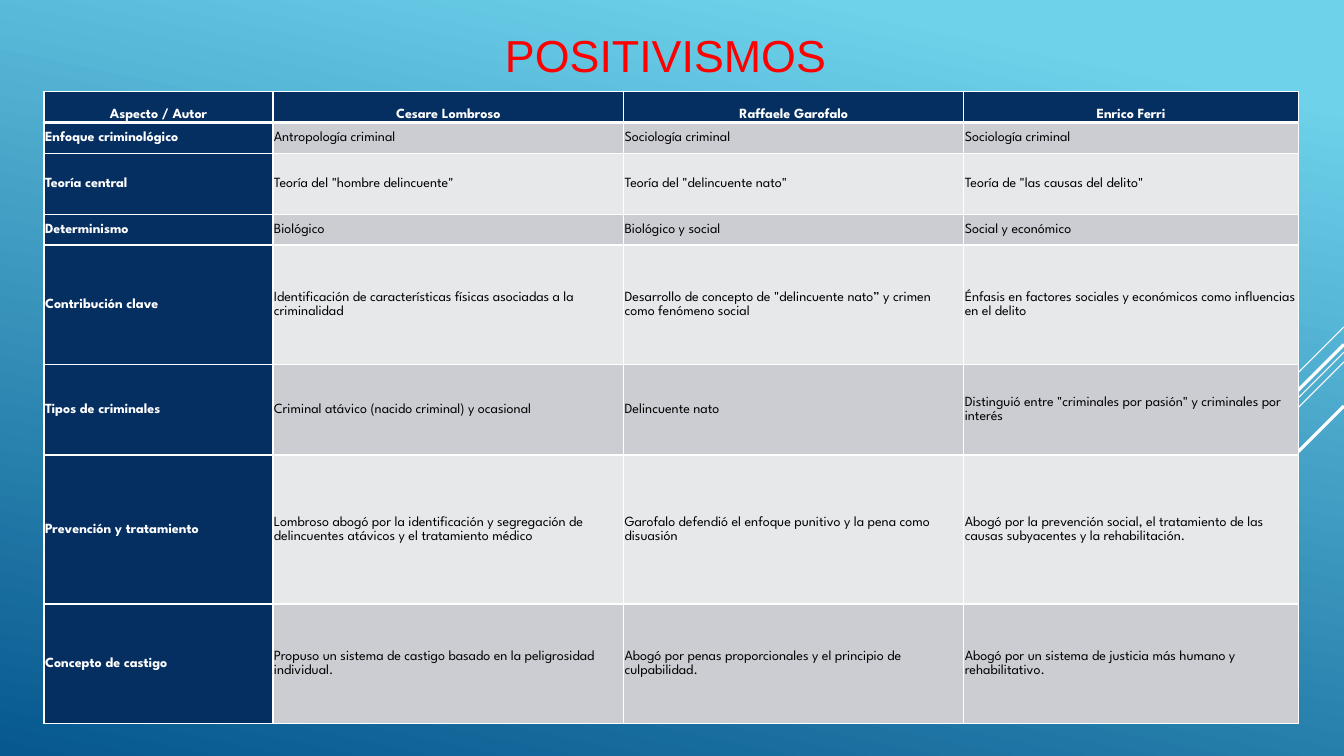
from dataclasses import dataclass

from lxml.etree import SubElement
from pptx import Presentation
from pptx.dml.color import RGBColor
from pptx.enum.shapes import MSO_CONNECTOR
from pptx.enum.text import MSO_ANCHOR, PP_ALIGN
from pptx.oxml import parse_xml
from pptx.oxml.ns import nsdecls, qn
from pptx.util import Pt


@dataclass(frozen=True)
class Theme:
    sky: str = "6ED2EB"
    ocean: str = "06588E"
    navy: str = "052F61"
    white: str = "FFFFFF"
    black: str = "000000"
    red: str = "FF0000"
    bands: tuple = ("CCCDD2", "E7E8EA")
    title_font: str = "Arial"
    table_font: str = "League Spartan"
    title_size: float = 32
    table_size: float = 10
    table_spacing: float = 1.07
    cell_margin: float = 0.7
    thin_border: float = 1
    header_border: float = 3


WIDTH, HEIGHT = 960, 540

RAYS = [
    (233.5, 72, 0.75),
    (251.5, 234.5, 0.75),
    (258.5, 149, 0.75),
    (246, 137.5, 2.25),
    (290, 100, 2.25),
]

COLUMN_WIDTHS = [163.5, 250.5, 243, 239]
ROW_HEIGHTS = [22, 22, 43.5, 22, 85.5, 64.5, 106.5, 85.5]
AUTHORS_BY_ASPECT = [
    ["Aspecto / Autor", "Cesare Lombroso", "Raffaele Garofalo", "Enrico Ferri"],
    ["Enfoque criminológico", "Antropología criminal", "Sociología criminal", "Sociología criminal"],
    ["Teoría central", 'Teoría del "hombre delincuente"', 'Teoría del "delincuente nato"',
     'Teoría de "las causas del delito"'],
    ["Determinismo", "Biológico", "Biológico y social", "Social y económico"],
    ["Contribución clave",
     "Identificación de características físicas asociadas a la criminalidad",
     'Desarrollo de concepto de "delincuente nato” y crimen como fenómeno social',
     "Énfasis en factores sociales y económicos como influencias en el delito"],
    ["Tipos de criminales",
     "Criminal atávico (nacido criminal) y ocasional",
     "Delincuente nato",
     'Distinguió entre "criminales por pasión" y criminales por interés'],
    ["Prevención y tratamiento",
     "Lombroso abogó por la identificación y segregación de delincuentes atávicos y el tratamiento médico",
     "Garofalo defendió el enfoque punitivo y la pena como disuasión",
     "Abogó por la prevención social, el tratamiento de las causas subyacentes y la rehabilitación."],
    ["Concepto de castigo",
     "Propuso un sistema de castigo basado en la peligrosidad individual.",
     "Abogó por penas proporcionales y el principio de culpabilidad.",
     "Abogó por un sistema de justicia más humano y rehabilitativo."],
]


def rgb(color):
    return RGBColor.from_string(color)


class SlideBuilder:
    def __init__(self, page, theme):
        self.page = page
        self.theme = theme

    def background(self, angle):
        fill = self.page.background.fill
        fill.gradient()
        fill.gradient_angle = 360 - angle
        stops = [(0.1, self.theme.sky), (1, self.theme.ocean)]
        for stop, (position, color) in zip(fill.gradient_stops, stops):
            stop.position = position
            stop.color.rgb = rgb(color)

    def ray(self, top, run, weight):
        line = self.page.shapes.add_connector(
            MSO_CONNECTOR.STRAIGHT, Pt(WIDTH), Pt(top), Pt(WIDTH - run), Pt(top + run))
        line.line.color.rgb = rgb(self.theme.white)
        line.line.width = Pt(weight)
        SubElement(line._element.spPr, qn("a:effectLst"))

    def style(self, paragraph, font, size, color, bold=False):
        paragraph.font.name = font
        paragraph.font.size = Pt(size)
        paragraph.font.color.rgb = rgb(color)
        paragraph.font.bold = bold

    def title(self, text, left, top, width, height):
        box = self.page.shapes.add_textbox(Pt(left), Pt(top), Pt(width), Pt(height))
        frame = box.text_frame
        frame.word_wrap = True
        frame.vertical_anchor = MSO_ANCHOR.MIDDLE
        paragraph = frame.paragraphs[0]
        paragraph.text = text
        paragraph.alignment = PP_ALIGN.CENTER
        self.style(paragraph, self.theme.title_font, self.theme.title_size, self.theme.red)

    def table(self, rows, left, top, widths, heights):
        table = self.page.shapes.add_table(
            len(heights), len(widths), Pt(left), Pt(top), Pt(sum(widths)), Pt(sum(heights))).table
        for column, width in zip(table.columns, widths):
            column.width = Pt(width)
        for row, height in zip(table.rows, heights):
            row.height = Pt(height)
        for row_index, texts in enumerate(rows):
            for column_index, text in enumerate(texts):
                self.cell(table.cell(row_index, column_index), text, row_index, column_index)

    def cell(self, cell, text, row, column):
        theme = self.theme
        is_header = row == 0
        is_label = is_header or column == 0
        cell.margin_left = cell.margin_right = Pt(theme.cell_margin)
        cell.margin_top = cell.margin_bottom = Pt(theme.cell_margin)
        cell.vertical_anchor = MSO_ANCHOR.BOTTOM if is_header else MSO_ANCHOR.MIDDLE
        cell.fill.solid()
        cell.fill.fore_color.rgb = rgb(theme.navy if is_label else theme.bands[(row - 1) % 2])
        paragraph = cell.text_frame.paragraphs[0]
        paragraph.text = text
        paragraph.alignment = PP_ALIGN.CENTER if is_header else PP_ALIGN.LEFT
        paragraph.line_spacing = theme.table_spacing
        self.style(paragraph, theme.table_font, theme.table_size,
                   theme.white if is_label else theme.black, is_label)
        self.borders(cell, row)

    def borders(self, cell, row):
        theme = self.theme
        weights = dict.fromkeys("LRTB", theme.thin_border)
        if row == 0:
            weights["B"] = theme.header_border
        elif row == 1:
            weights["T"] = theme.header_border
        properties = cell._tc.get_or_add_tcPr()
        for index, (side, weight) in enumerate(weights.items()):
            properties.insert(index, parse_xml(
                f'<a:ln{side} {nsdecls("a")} w="{Pt(weight)}"><a:solidFill>'
                f'<a:srgbClr val="{theme.white}"/></a:solidFill></a:ln{side}>'))


def main():
    deck = Presentation()
    deck.slide_width, deck.slide_height = Pt(WIDTH), Pt(HEIGHT)
    page = deck.slides.add_slide(deck.slide_layouts[6])
    builder = SlideBuilder(page, Theme())
    builder.background(102)
    for top, run, weight in RAYS:
        builder.ray(top, run, weight)
    builder.title("POSITIVISMOS ", 286, 11, 388, 55.5)
    builder.table(AUTHORS_BY_ASPECT, 31.5, 65.5, COLUMN_WIDTHS, ROW_HEIGHTS)
    deck.save("out.pptx")


if __name__ == "__main__":
    main()
